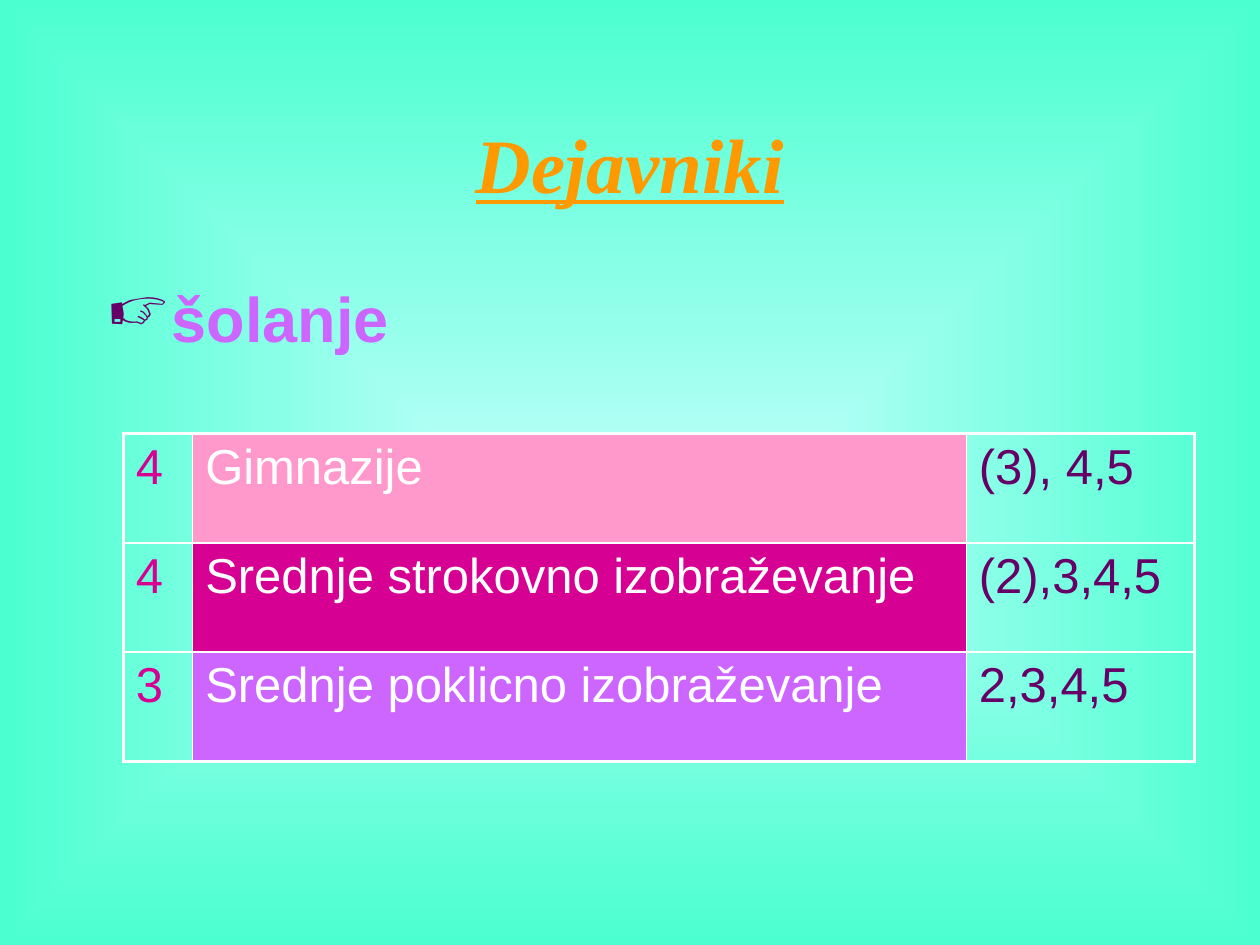
from lxml import etree
from pptx import Presentation
from pptx.dml.color import RGBColor
from pptx.enum import text
from pptx.oxml import parse_xml
from pptx.oxml.ns import nsdecls, qn
from pptx.util import Pt

TITLE = "Dejavniki"
TOPIC = "šolanje"
PROGRAMMES = [  # years, programme, grades, programme fill
    ("4", "Gimnazije", "(3), 4,5", "FF99CC"),
    ("4", "Srednje strokovno izobraževanje", "(2),3,4,5", "D60093"),
    ("3", "Srednje poklicno izobraževanje", "2,3,4,5", "CC66FF"),
]
COLUMN_WIDTHS = (39.6, 442.1, 130.3)
COLUMN_COLOURS = ("D60093", "FFFFFF", "660066")
ROW_HEIGHT = 62.5
OUTER_BORDER, INNER_BORDER = 2.25, 1
CENTRE_COLOUR, EDGE_COLOUR = "B7FFF8", "4BFFD0"


def rgb(colour):
    return RGBColor.from_string(colour)


def style(paragraph, size, colour, font="Arial", **flags):
    paragraph.font.size = Pt(size)
    paragraph.font.name = font
    paragraph.font.color.rgb = rgb(colour)
    for flag, value in flags.items():
        setattr(paragraph.font, flag, value)


def add_text(slide, words, left, top, width, height, anchor):
    frame = slide.shapes.add_textbox(Pt(left), Pt(top), Pt(width), Pt(height)).text_frame
    frame.word_wrap = True
    frame.vertical_anchor = anchor
    frame.text = words
    return frame.paragraphs[0]


def paint_background(slide):
    """Gradient that runs from the centre of the slide to its edges."""
    fill = slide.background.fill
    fill.gradient()
    for stop, colour, position in zip(fill.gradient_stops, (CENTRE_COLOUR, EDGE_COLOUR), (0, 1)):
        stop.color.rgb = rgb(colour)
        stop.position = position
    linear = next(slide.background._cSld.iter(qn("a:lin")))
    linear.getparent().replace(linear, parse_xml(
        f'<a:path {nsdecls("a")} path="shape">'
        '<a:fillToRect l="50000" t="50000" r="50000" b="50000"/></a:path>'))


def add_bullet(paragraph, sign, colour, percent, indent):
    properties = paragraph._p.get_or_add_pPr()
    properties.set("marL", str(Pt(indent)))
    properties.set("indent", str(-Pt(indent)))
    colour_element = etree.SubElement(properties, qn("a:buClr"))
    etree.SubElement(colour_element, qn("a:srgbClr"), val=colour)
    etree.SubElement(properties, qn("a:buSzPct"), val=str(percent * 1000))
    etree.SubElement(properties, qn("a:buChar"), char=sign)
    # The schema wants default run properties after the bullet.
    properties.append(properties.find(qn("a:defRPr")))


def set_borders(cell, widths):
    properties = cell._tc.get_or_add_tcPr()
    for position, (side, width) in enumerate(widths.items()):
        properties.insert(position, parse_xml(
            f'<a:ln{side} {nsdecls("a")} w="{Pt(width)}"><a:solidFill>'
            f'<a:srgbClr val="FFFFFF"/></a:solidFill></a:ln{side}>'))


def add_programmes(slide, left, top):
    rows, columns = len(PROGRAMMES), len(COLUMN_WIDTHS)
    table = slide.shapes.add_table(rows, columns, Pt(left), Pt(top),
                                   Pt(sum(COLUMN_WIDTHS)), Pt(rows * ROW_HEIGHT)).table
    table.first_row = table.horz_banding = False
    for column, width in zip(table.columns, COLUMN_WIDTHS):
        column.width = Pt(width)
    for r, (*words, programme_fill) in enumerate(PROGRAMMES):
        table.rows[r].height = Pt(ROW_HEIGHT)
        for c, (word, colour) in enumerate(zip(words, COLUMN_COLOURS)):
            cell = table.cell(r, c)
            cell.text = word
            style(cell.text_frame.paragraphs[0], 28, colour)
            if c == 1:
                cell.fill.solid()
                cell.fill.fore_color.rgb = rgb(programme_fill)
            else:
                cell.fill.background()
            outer = {"L": c == 0, "R": c == columns - 1, "T": r == 0, "B": r == rows - 1}
            set_borders(cell, {side: OUTER_BORDER if is_outer else INNER_BORDER
                               for side, is_outer in outer.items()})


def main():
    presentation = Presentation()
    presentation.slide_width, presentation.slide_height = Pt(720), Pt(540)
    slide = presentation.slides.add_slide(presentation.slide_layouts[6])
    paint_background(slide)

    title = add_text(slide, TITLE, 54, 48, 612, 90, text.MSO_ANCHOR.MIDDLE)
    title.alignment = text.PP_ALIGN.CENTER
    style(title, 44, "FF9900", "Times New Roman", bold=True, italic=True, underline=True)

    topic = add_text(slide, TOPIC, 54, 156, 300, 324, text.MSO_ANCHOR.TOP)
    topic.space_before = Pt(4)
    style(topic, 36, "CC66FF", bold=True)
    add_bullet(topic, "☞", "660066", 97, 37)

    add_programmes(slide, 70.5, 247.7)
    presentation.save("out.pptx")


if __name__ == "__main__":
    main()
